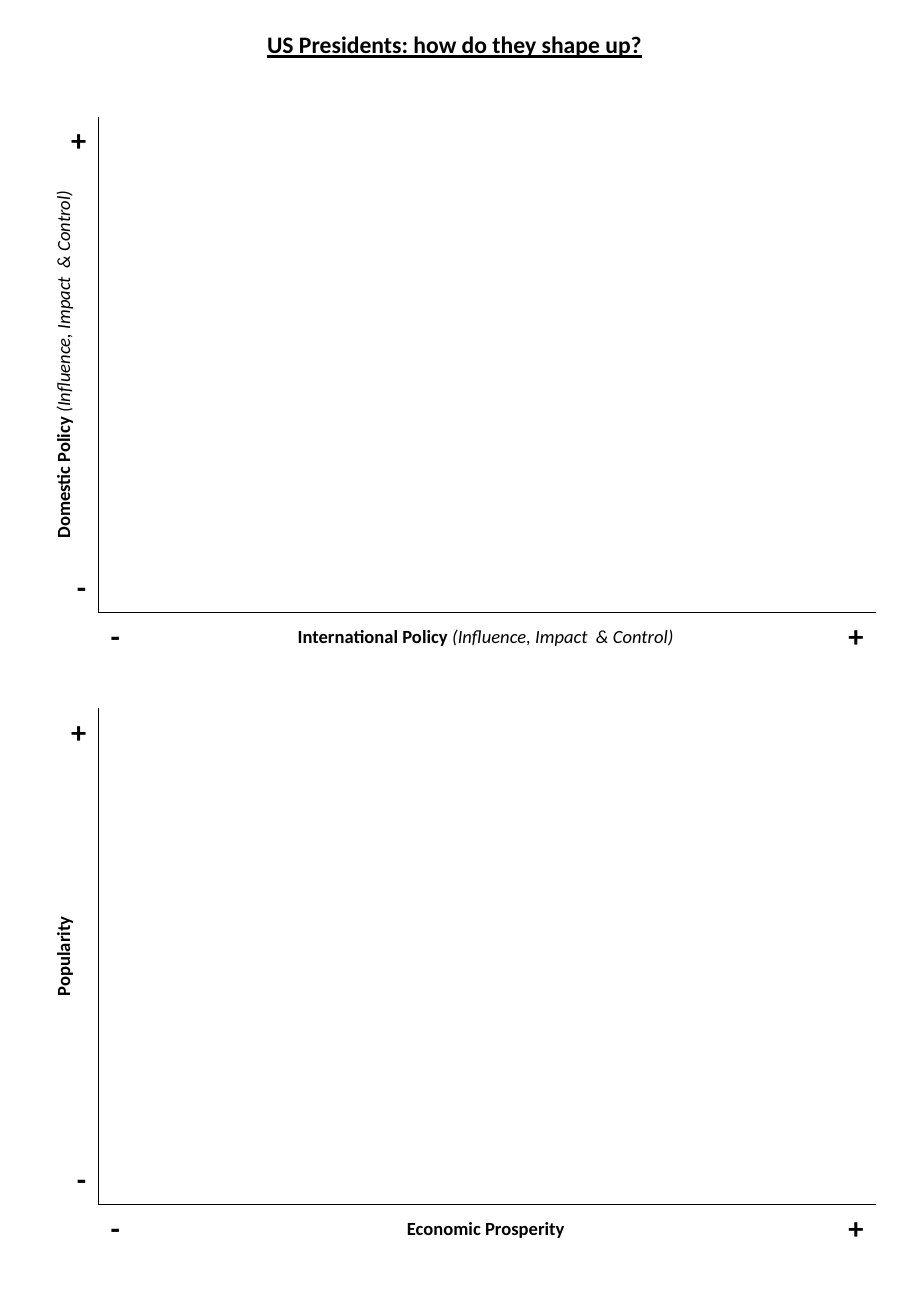
from dataclasses import dataclass

from lxml import etree
from pptx import Presentation
from pptx.dml.color import RGBColor
from pptx.enum.text import MSO_ANCHOR, MSO_AUTO_SIZE, PP_ALIGN
from pptx.oxml.ns import qn
from pptx.table import _Cell as Cell
from pptx.text.text import TextFrame
from pptx.util import Inches, Pt


@dataclass(frozen=True)
class Theme:
    font: str = "Calibri"
    ink: str = "000000"
    title_size: int = 14
    sign_size: int = 18
    label_size: int = 11
    axis_width: int = 1


@dataclass(frozen=True)
class Grid:
    """Column widths and row heights shared by both graphs, in inches."""
    left: float = 0.38
    columns: tuple[float, ...] = (0.43, 0.33, 5.72, 0.35)
    rows: tuple[float, ...] = (0.4, 3.27, 0.4, 0.4)


@dataclass(frozen=True)
class AxisLabel:
    name: str
    detail: str = ""


@dataclass(frozen=True)
class Graph:
    top: float
    vertical: AxisLabel
    horizontal: AxisLabel


THEME = Theme()
GRID = Grid()
SLIDE_WIDTH, SLIDE_HEIGHT = 7.5, 10.83
NO_STYLE = "{2D5ABB26-0587-4C30-8999-92F81FD0307C}"
TITLE = "US Presidents: how do they shape up?"
DETAIL = "(Influence, Impact  & Control)"
GRAPHS = (
    Graph(0.96, AxisLabel("Domestic Policy ", DETAIL),
          AxisLabel("International Policy ", DETAIL)),
    Graph(5.83, AxisLabel("Popularity"), AxisLabel("Economic Prosperity")),
)
# Plus and minus signs at the ends of the axes: row, column, sign, alignment
SIGNS = (
    (0, 0, "+", PP_ALIGN.RIGHT),
    (2, 0, "-", PP_ALIGN.RIGHT),
    (3, 1, "-", PP_ALIGN.LEFT),
    (3, 3, "+", PP_ALIGN.RIGHT),
)


def write(frame: TextFrame, label: AxisLabel, size: int, align: PP_ALIGN) -> None:
    """Set a bold name, followed by an italic detail if there is one."""
    paragraph = frame.paragraphs[0]
    paragraph.text = label.name
    if label.detail:
        paragraph.add_run().text = label.detail
    paragraph.alignment = align
    for index, run in enumerate(paragraph.runs):
        run.font.name = THEME.font
        run.font.size = Pt(size)
        run.font.bold = index == 0
        run.font.italic = index > 0
        run.font.color.rgb = RGBColor.from_string(THEME.ink)


def add_borders(cell: Cell, sides: str) -> None:
    """Rule the given sides, named in the schema order L, R, T, B."""
    properties = cell._tc.get_or_add_tcPr()
    for index, side in enumerate(sides):
        line = etree.Element(qn(f"a:ln{side}"), w=str(Pt(THEME.axis_width)))
        fill = etree.SubElement(line, qn("a:solidFill"))
        etree.SubElement(fill, qn("a:srgbClr"), val=THEME.ink)
        properties.insert(index, line)


def add_graph(slide, graph: Graph) -> None:
    table = slide.shapes.add_table(
        len(GRID.rows), len(GRID.columns), Inches(GRID.left), Inches(graph.top),
        Inches(sum(GRID.columns)), Inches(sum(GRID.rows))).table
    table.first_row = table.horz_banding = False
    table._tbl.tblPr.find(qn("a:tableStyleId")).text = NO_STYLE
    for column, width in zip(table.columns, GRID.columns):
        column.width = Inches(width)
    for row, height in zip(table.rows, GRID.rows):
        row.height = Inches(height)
    for cell in table.iter_cells():
        cell.fill.background()

    # Plot area and its two axes
    plot = table.cell(0, 1)
    plot.merge(table.cell(2, 3))
    add_borders(plot, "LB")
    for row in range(3):
        add_borders(table.cell(row, 0), "R")
    for column in range(1, 4):
        add_borders(table.cell(3, column), "T")

    # Signs and axis labels
    for row, column, sign, align in SIGNS:
        write(table.cell(row, column).text_frame, AxisLabel(sign),
              THEME.sign_size, align)
    side, base = table.cell(1, 0), table.cell(3, 2)
    side._tc.get_or_add_tcPr().set("vert", "vert270")
    base.vertical_anchor = MSO_ANCHOR.MIDDLE
    for cell, label in ((side, graph.vertical), (base, graph.horizontal)):
        write(cell.text_frame, label, THEME.label_size, PP_ALIGN.CENTER)


def add_title(slide) -> None:
    box = slide.shapes.add_textbox(Inches(2.1), Inches(0.2), Inches(3.31), Inches(0.34))
    frame = box.text_frame
    frame.word_wrap = False
    frame.auto_size = MSO_AUTO_SIZE.SHAPE_TO_FIT_TEXT
    write(frame, AxisLabel(TITLE), THEME.title_size, PP_ALIGN.LEFT)
    frame.paragraphs[0].runs[0].font.underline = True


def main() -> None:
    presentation = Presentation()
    presentation.slide_width = Inches(SLIDE_WIDTH)
    presentation.slide_height = Inches(SLIDE_HEIGHT)
    slide = presentation.slides.add_slide(presentation.slide_layouts[6])
    for graph in GRAPHS:
        add_graph(slide, graph)
    add_title(slide)
    presentation.save("out.pptx")


if __name__ == "__main__":
    main()
